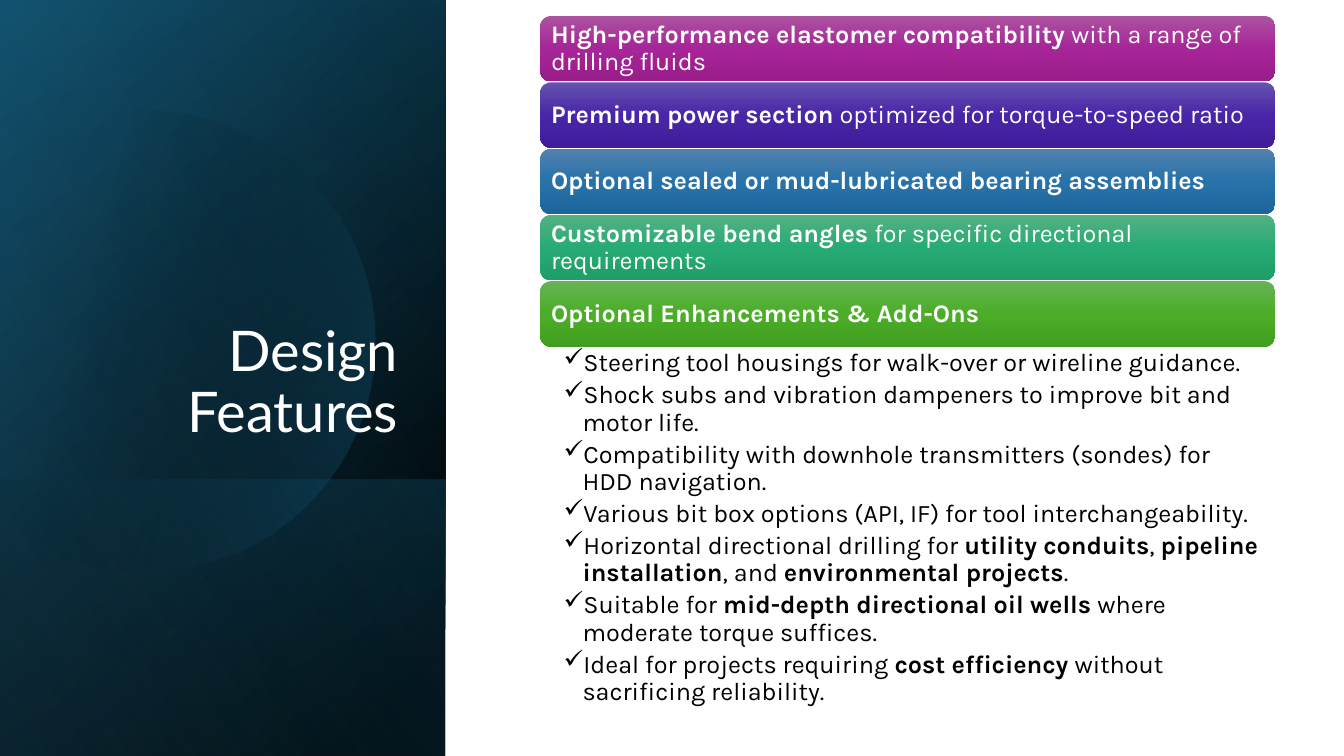
from pptx import Presentation
from pptx.dml.color import RGBColor
from pptx.enum.shapes import MSO_SHAPE
from pptx.enum.text import MSO_ANCHOR, MSO_AUTO_SIZE, PP_ALIGN
from pptx.oxml import parse_xml
from pptx.oxml.ns import nsdecls
from pptx.util import Pt

RECT, ROUNDED = MSO_SHAPE.RECTANGLE, MSO_SHAPE.ROUNDED_RECTANGLE
TOP, MIDDLE, BOTTOM = MSO_ANCHOR.TOP, MSO_ANCHOR.MIDDLE, MSO_ANCHOR.BOTTOM
LEFT, RIGHT = PP_ALIGN.LEFT, PP_ALIGN.RIGHT
NO_FIT = MSO_AUTO_SIZE.NONE

COLORS = {"black": "000000", "white": "FFFFFF", "navy": "104862",
          "teal": "156082", "sky": "46B1E1"}

TITLE = "Design Features"

# Gradient stops of each bar, then its runs as (text, bold)
BARS = [
    (("AC53A0", "A62598", "991C8B"),
     [("High-performance elastomer compatibility", True),
      (" with a range of drilling fluids", False)]),
    (("6553AE", "4926A8", "3E1C9A"),
     [("Premium power section", True),
      (" optimized for torque-to-speed ratio", False)]),
    (("5382AF", "2772A9", "1D669C"),
     [("Optional sealed or mud-lubricated bearing assemblies", True)]),
    (("54B183", "27AB74", "1E9E68"),
     [("Customizable bend angles", True),
      (" for specific directional requirements", False)]),
    (("66B354", "4BAD28", "409F1E"),
     [("Optional Enhancements & Add-Ons", True)]),
]

ADD_ONS = [
    [("Steering tool housings for walk-over or wireline guidance.", False)],
    [("Shock subs and vibration dampeners to improve bit and motor life.", False)],
    [("Compatibility with downhole transmitters (sondes) for HDD navigation.", False)],
    [("Various bit box options (API, IF) for tool interchangeability.", False)],
    [("Horizontal directional drilling for ", False), ("utility conduits", True),
     (", ", False), ("pipeline installation", True), (", and ", False),
     ("environmental projects", True), (".", False)],
    [("Suitable for ", False), ("mid-depth directional oil wells", True),
     (" where moderate torque suffices.", False)],
    [("Ideal for projects requiring ", False), ("cost efficiency", True),
     (" without sacrificing reliability.", False)],
]

SLIDE_W, SLIDE_H = 960, 540
PANEL_W = 318.2
LOWER_TOP = 342.7
BAR_LEFT, BAR_TOP, BAR_W, BAR_H, BAR_STEP = 385.9, 11.4, 524.9, 46.8, 47.35

# Panel layers: top edge, gradient angle, stops as (position, color, opacity)
LAYERS_BELOW = [
    (0, 50, [(8, "black", 100), (100, "navy", 100)]),
    (0, 30, [(0, "black", 0), (99, "teal", 46)]),
    (LOWER_TOP, 130, [(2, "teal", 29), (100, "black", 30)]),
]
DISC_STOPS = [(29, "black", 0), (100, "teal", 43)]
LAYER_ABOVE = (0, 120, [(0, "black", 0), (99, "sky", 11)])

# Disc outline: start point, then cubic curves and corner points
DISC_START = (107.3, 79.2)
DISC_PARTS = [
    [(177.1, 80.6), (241.2, 127.4), (261.4, 198)],
    [(286.6, 285.8), (236.2, 376.6), (149, 401.8)],
    [(94.3, 417.6), (38.2, 403.9), (-2.2, 370.1)],
    [(-10.8, 362.2)],
    [(-10.8, 126)],
    [(0, 115.9)],
    [(16.6, 102.2), (36, 92.2), (57.6, 85.7)],
    [(74.2, 81.4), (90.7, 79.2), (107.3, 79.2)],
]
CURVE_STEPS = 16


def fill_gradient(sp, angle, stops):
    """Fill with (position, hex, opacity) stops and drop outline and shadow."""
    gs = "".join(
        f'<a:gs pos="{pos * 1000}"><a:srgbClr val="{color}">'
        f'<a:alpha val="{opacity * 1000}"/></a:srgbClr></a:gs>'
        for pos, color, opacity in stops)
    grad = parse_xml(
        f'<a:gradFill {nsdecls("a")} rotWithShape="1"><a:gsLst>{gs}</a:gsLst>'
        f'<a:lin ang="{angle * 60000}" scaled="0"/></a:gradFill>')
    sp.shadow.inherit = False
    sp.line.fill.background()
    sp.fill.background()
    spPr = sp.element.spPr
    spPr.replace(spPr.find("{*}noFill"), grad)


def named(stops):
    return [(pos, COLORS[name], opacity) for pos, name, opacity in stops]


def add_layer(s, top, angle, stops):
    """Add a flipped quarter-turned rectangle from top to the slide's foot."""
    height = SLIDE_H - top
    left = (PANEL_W - height) / 2
    sp = s.shapes.add_shape(RECT, Pt(left), Pt(top + (height - PANEL_W) / 2),
                            Pt(height), Pt(PANEL_W))
    sp.rotation = 90
    sp.element.spPr.xfrm.set("flipH", "1")
    fill_gradient(sp, angle, named(stops))


def curve_points(p0, p1, p2, p3):
    for i in range(1, CURVE_STEPS + 1):
        t = i / CURVE_STEPS
        u = 1 - t
        yield tuple(u**3 * a + 3 * u * u * t * b + 3 * u * t * t * c + t**3 * d
                    for a, b, c, d in zip(p0, p1, p2, p3))


def add_disc(s):
    points, last = [], DISC_START
    for part in DISC_PARTS:
        points += curve_points(last, *part) if len(part) == 3 else part
        last = part[-1]
    builder = s.shapes.build_freeform(Pt(DISC_START[0]), Pt(DISC_START[1]))
    builder.add_line_segments([(Pt(x), Pt(y)) for x, y in points], close=True)
    fill_gradient(builder.convert_to_shape(), 14, named(DISC_STOPS))


def set_frame(tf, anchor, insets):
    tf.word_wrap = True
    tf.auto_size = NO_FIT
    tf.vertical_anchor = anchor
    tf.margin_left, tf.margin_top, tf.margin_right, tf.margin_bottom = map(Pt, insets)


def write_runs(p, runs, color, font="Karla", size=18, align=LEFT):
    p.alignment = align
    p.line_spacing = 0.9
    for text, bold in runs:
        r = p.add_run()
        r.text = text
        r.font.name, r.font.size, r.font.bold = font, Pt(size), bold
        r.font.color.rgb = RGBColor.from_string(COLORS[color])


def add_check_mark(p):
    pPr = p._p.get_or_add_pPr()
    pPr.set("marL", str(Pt(13.5)))
    pPr.set("indent", str(-Pt(13.5)))
    pPr.append(parse_xml(f'<a:buChar {nsdecls("a")} char="✓"/>'))


def main():
    prs = Presentation()
    prs.slide_width, prs.slide_height = Pt(SLIDE_W), Pt(SLIDE_H)
    s = prs.slides.add_slide(prs.slide_layouts[5])

    for layer in LAYERS_BELOW:
        add_layer(s, *layer)
    add_disc(s)
    add_layer(s, *LAYER_ABOVE)

    title = s.shapes.title
    title.element.getparent().append(title.element)
    title.left, title.top, title.width, title.height = map(Pt, (46.1, 132.5, 245.5, 188.6))
    set_frame(title.text_frame, BOTTOM, (7.2, 3.6, 7.2, 3.6))
    write_runs(title.text_frame.paragraphs[0], [(TITLE, False)], "white", "Lato", 40, RIGHT)

    for i, (shades, runs) in enumerate(BARS):
        bar = s.shapes.add_shape(ROUNDED, Pt(BAR_LEFT), Pt(BAR_TOP + i * BAR_STEP),
                                 Pt(BAR_W), Pt(BAR_H))
        fill_gradient(bar, 90, [(pos, c, 100) for pos, c in zip((0, 50, 100), shades)])
        set_frame(bar.text_frame, MIDDLE, (5.4, 5.4, 5.4, 5.4))
        write_runs(bar.text_frame.paragraphs[0], runs, "white")

    list_top = BAR_TOP + len(BARS) * BAR_STEP
    box = s.shapes.add_textbox(Pt(BAR_LEFT), Pt(list_top), Pt(BAR_W), Pt(283.7))
    tf = box.text_frame
    set_frame(tf, TOP, (16.7, 1.8, 10, 1.8))
    for i, runs in enumerate(ADD_ONS):
        p = tf.add_paragraph() if i else tf.paragraphs[0]
        p.level = 1
        write_runs(p, runs, "black")
        p.space_after = Pt(3.5)
        add_check_mark(p)

    prs.save("out.pptx")


if __name__ == "__main__":
    main()
